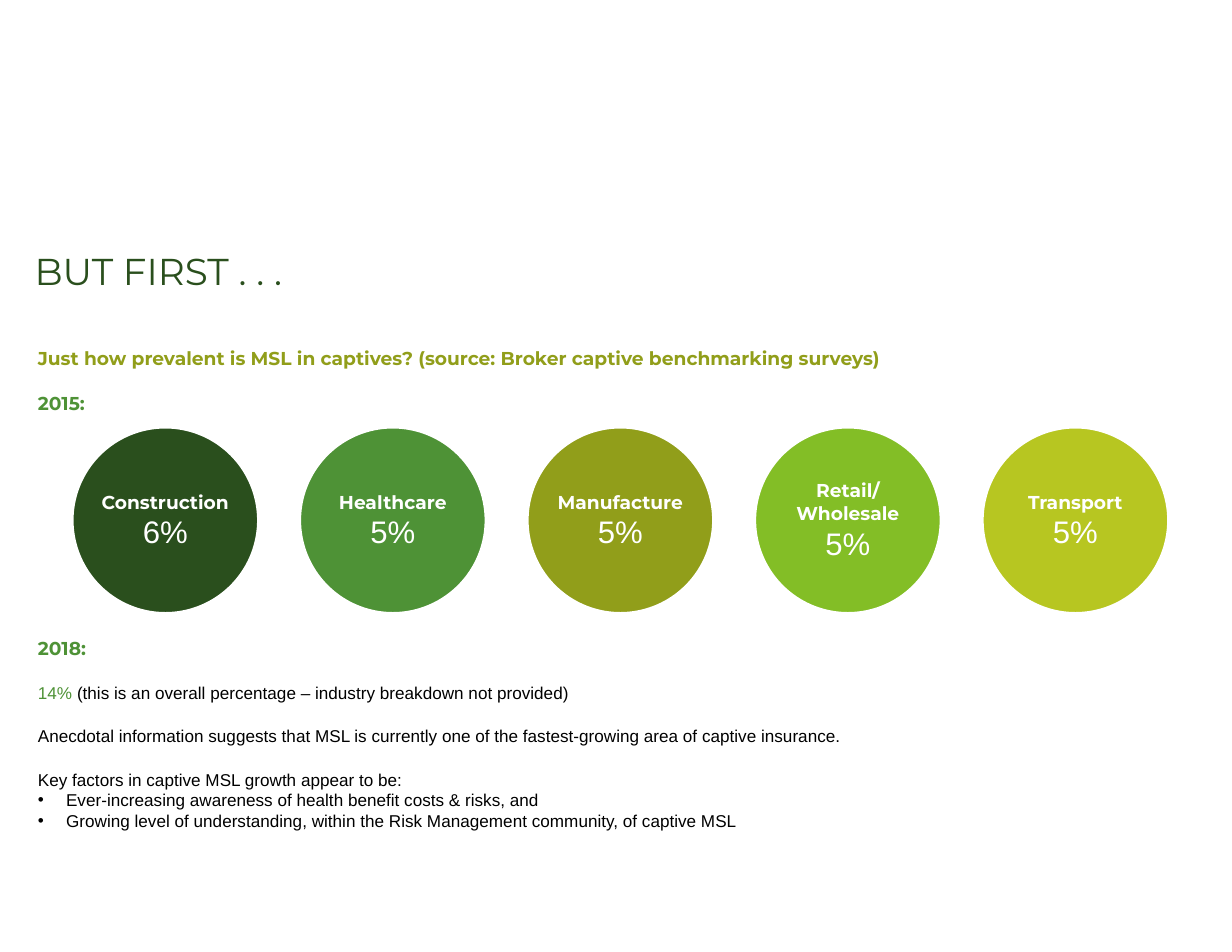
from lxml.etree import SubElement
from pptx import Presentation
from pptx.dml.color import RGBColor
from pptx.enum.shapes import MSO_SHAPE
from pptx.enum.text import MSO_ANCHOR, MSO_AUTO_SIZE, PP_ALIGN
from pptx.oxml.ns import qn
from pptx.util import Cm, Pt

DARK_GREEN = RGBColor(0x2A, 0x4F, 0x1D)
GREEN = RGBColor(0x4E, 0x92, 0x36)
OLIVE = RGBColor(0x91, 0x9E, 0x1A)
BRIGHT_GREEN = RGBColor(0x83, 0xBE, 0x26)
LIME = RGBColor(0xB7, 0xC6, 0x21)
WHITE = RGBColor(0xFF, 0xFF, 0xFF)
BLACK = RGBColor(0, 0, 0)

INDUSTRIES = [
    (["Construction"], "6%", DARK_GREEN),
    (["Healthcare"], "5%", GREEN),
    (["Manufacture"], "5%", OLIVE),
    (["Retail/", "Wholesale"], "5%", BRIGHT_GREEN),
    (["Transport"], "5%", LIME),
]
CIRCLE_LEFT, CIRCLE_TOP, CIRCLE_SIZE, CIRCLE_PITCH = 1.63, 9.68, 4.24, 5.16
GAP = 14.6


class SlideBuilder:
    heading_font = "Montserrat"
    body_font = "Arial"

    def __init__(self, slide):
        self.slide = slide

    def style(self, span, size, color, heading=False, bold=False):
        span.font.name = self.heading_font if heading else self.body_font
        span.font.size = Pt(size)
        span.font.bold = bold
        span.font.color.rgb = color

    def title(self, text, left, top, width, height):
        box = self.slide.shapes.title
        box.left, box.top, box.width, box.height = Cm(left), Cm(top), Cm(width), Cm(height)
        frame = box.text_frame
        frame.text = text
        frame.word_wrap = False
        frame.auto_size = MSO_AUTO_SIZE.NONE
        frame.vertical_anchor = MSO_ANCHOR.TOP
        para = frame.paragraphs[0]
        para.alignment = PP_ALIGN.LEFT
        self.style(para.runs[0], 24, DARK_GREEN, heading=True)

    def text_box(self, left, top, width, height):
        box = self.slide.shapes.add_textbox(Cm(left), Cm(top), Cm(width), Cm(height))
        box.text_frame.word_wrap = True
        return box.text_frame

    def paragraph(self, frame, text, space_before=0):
        para = frame.paragraphs[0]
        if para.text:
            para = frame.add_paragraph()
        para.text = text
        if space_before:
            para.space_before = Pt(space_before)
        return para

    def heading(self, frame, text, color, space_before=0):
        para = self.paragraph(frame, text, space_before)
        self.style(para.runs[0], 12, color, heading=True, bold=True)

    def body(self, frame, text, space_before=0, color=BLACK):
        para = self.paragraph(frame, text, space_before)
        self.style(para.runs[0], 11, color)
        return para

    def bullet(self, frame, text):
        para = self.body(frame, text)
        properties = para._p.get_or_add_pPr()
        properties.set("marL", str(Cm(0.64)))
        properties.set("indent", str(-Cm(0.64)))
        SubElement(properties, qn("a:buFont"), typeface=self.body_font)
        SubElement(properties, qn("a:buChar"), char="•")

    def circle(self, left, top, size, labels, value, color):
        circle = self.slide.shapes.add_shape(
            MSO_SHAPE.OVAL, Cm(left), Cm(top), Cm(size), Cm(size))
        circle.shadow.inherit = False
        circle.fill.solid()
        circle.fill.fore_color.rgb = color
        circle.line.color.rgb = WHITE
        circle.line.width = Pt(2.25)
        frame = circle.text_frame
        frame.word_wrap = False
        frame.vertical_anchor = MSO_ANCHOR.MIDDLE
        for label in labels:
            self.heading(frame, label, WHITE)
        self.style(self.paragraph(frame, value).runs[0], 20, WHITE)
        for para in frame.paragraphs:
            para.alignment = PP_ALIGN.CENTER


def main():
    deck = Presentation()
    deck.slide_width, deck.slide_height = Cm(27.94), Cm(21.59)
    page = SlideBuilder(deck.slides.add_slide(deck.slide_layouts[5]))

    page.title("BUT FIRST . . .", 0.53, 5.51, 7.29, 1.27)

    intro = page.text_box(0.61, 7.75, 26.37, 1.9)
    page.heading(
        intro, "Just how prevalent is MSL in captives? (source: Broker captive benchmarking surveys)", OLIVE)
    page.heading(intro, "2015:", GREEN, GAP)

    for index, (labels, value, color) in enumerate(INDUSTRIES):
        page.circle(CIRCLE_LEFT + index * CIRCLE_PITCH, CIRCLE_TOP, CIRCLE_SIZE, labels, value, color)

    findings = page.text_box(0.61, 14.33, 26.37, 4.95)
    page.heading(findings, "2018:", GREEN)
    overall = page.body(findings, "14% ", GAP, GREEN)
    span = overall.add_run()
    span.text = "(this is an overall percentage – industry breakdown not provided)"
    page.style(span, 11, BLACK)
    page.body(
        findings,
        "Anecdotal information suggests that MSL is currently one of the fastest-growing area of captive insurance.",
        GAP)
    page.body(findings, "Key factors in captive MSL growth appear to be:", GAP)
    page.bullet(findings, "Ever-increasing awareness of health benefit costs & risks, and")
    page.bullet(findings, "Growing level of understanding, within the Risk Management community, of captive MSL")

    deck.save("out.pptx")


if __name__ == "__main__":
    main()
